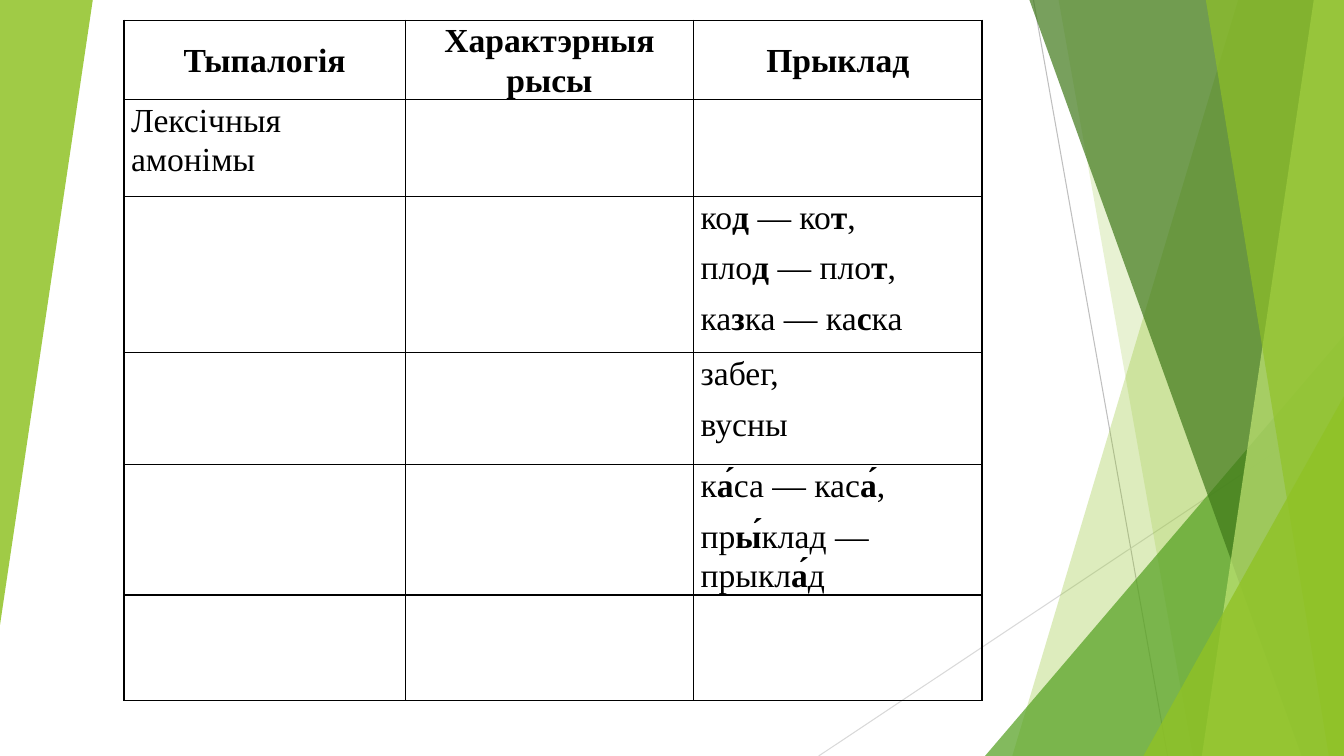
from lxml import etree
from pptx import Presentation, util as u
from pptx.dml import color
from pptx.enum import shapes, text
from pptx.oxml import ns

W, H = 13.33, 7.5
deck = Presentation()
deck.slide_width, deck.slide_height = u.Inches(W), u.Inches(H)
slide = deck.slides.add_slide(deck.slide_layouts[6])


def tint(fill, tone, alpha=100):
    fill.solid()
    fill.fore_color.rgb = color.RGBColor.from_string(tone)
    if alpha < 100:
        node = fill.fore_color._xFill[0]
        etree.SubElement(node, ns.qn("a:alpha"), val=str(alpha * 1000))


def write(frame, body, size=24, tone="000000", bold=False, align=None):
    for i, line in enumerate(body.split("\n")):
        para = frame.paragraphs[0] if i == 0 else frame.add_paragraph()
        para.alignment = align
        para.line_spacing = 1.07
        para.space_after = u.Pt(8)
        for j, part in enumerate(line.split("*")):
            run = para.add_run()
            run.text = part
            run.font.name = "Times New Roman"
            run.font.size = u.Pt(size)
            run.font.bold = bold or j % 2 == 1
            tint(run.font.fill, tone)


rays = [((10.25, 0, 11.58, H), "BFBFBF"), ((W, 4.03, 8.12, H), "D9D9D9")]
for ends, tone in rays:
    ray = slide.shapes.add_connector(shapes.MSO_CONNECTOR.STRAIGHT, *map(u.Inches, ends))
    ray.line.width = u.Pt(0.75)
    tint(ray.line.fill, tone)
    etree.SubElement(ray._element.spPr, ns.qn("a:effectLst"))

facets = [
    ("band", (12.28, 10.04), "90C226", 30),
    ("band", (10.5, 11.83), "90C226", 20),
    ("peak", (9.77, 3.33, 3.56, 4.17), "54A021", 72),
    ("band", (10.21, 12.91), "3F7819", 70),
    ("band", (13.03, 11.92), "C0E474", 70),
    ("band", (11.96, 13.18), "90C226", 65),
    ("peak", (11.34, 3.93, 1.99, 3.57), "90C226", 80),
    ("left", (0, 0, 0.92, 6.2), "90C226", 85),
]
for kind, spot, tone, alpha in facets:
    if kind == "band":
        top, base = map(u.Inches, spot)
        edge, low = u.Inches(W), u.Inches(H)
        path = slide.shapes.build_freeform(top, 0)
        path.add_line_segments([(edge, 0), (edge, low), (base, low)])
        facet = path.convert_to_shape()
    else:
        facet = slide.shapes.add_shape(
            shapes.MSO_SHAPE.ISOSCELES_TRIANGLE, *map(u.Inches, spot))
        facet.adjustments[0] = 1
        facet.rotation = 180 if kind == "left" else 0
    facet.shadow.inherit = False
    facet.line.fill.background()
    tint(facet.fill, tone, alpha)

cols = [2.79, 2.86, 2.86]
rows = [0.79, 0.96, 1.55, 1.11, 1.29, 1.05]
words = {
    (0, 0): "Тыпалогія",
    (0, 1): "Характэрныя рысы",
    (0, 2): "Прыклад",
    (1, 0): "Лексічныя амонімы",
    (2, 2): "ко*д *— ко*т*,\nпло*д* — пло*т*,\nка*з*ка — ка*с*ка",
    (3, 2): "забег,\nвусны",
    (4, 2): "к*а́*са — кас*а́*,\nпр*ы́*клад — прыкл*а́*д",
}
grid = slide.shapes.add_table(
    len(rows), len(cols), u.Inches(1.23), u.Inches(0.2),
    u.Inches(sum(cols)), u.Inches(sum(rows))).table
grid.first_row = grid.horz_banding = False
for col, width in zip(grid.columns, cols):
    col.width = u.Inches(width)
for r, height in enumerate(rows):
    grid.rows[r].height = u.Inches(height)
    for c in range(len(cols)):
        cell = grid.cell(r, c)
        cell.margin_left = cell.margin_right = u.Inches(0.07)
        cell.margin_top = cell.margin_bottom = 0
        props = cell._tc.get_or_add_tcPr()
        for side in "LRTB":
            rule = etree.SubElement(props, ns.qn(f"a:ln{side}"), w=str(u.Pt(1)))
            ink = etree.SubElement(rule, ns.qn("a:solidFill"))
            etree.SubElement(ink, ns.qn("a:srgbClr"), val="000000")
        cell.fill.background()
        head = r == 0
        if head:
            cell.vertical_anchor = text.MSO_ANCHOR.MIDDLE
        if (r, c) in words:
            write(cell.text_frame, words[r, c], bold=head,
                  align=text.PP_ALIGN.CENTER if head else None)

deck.save("out.pptx")
